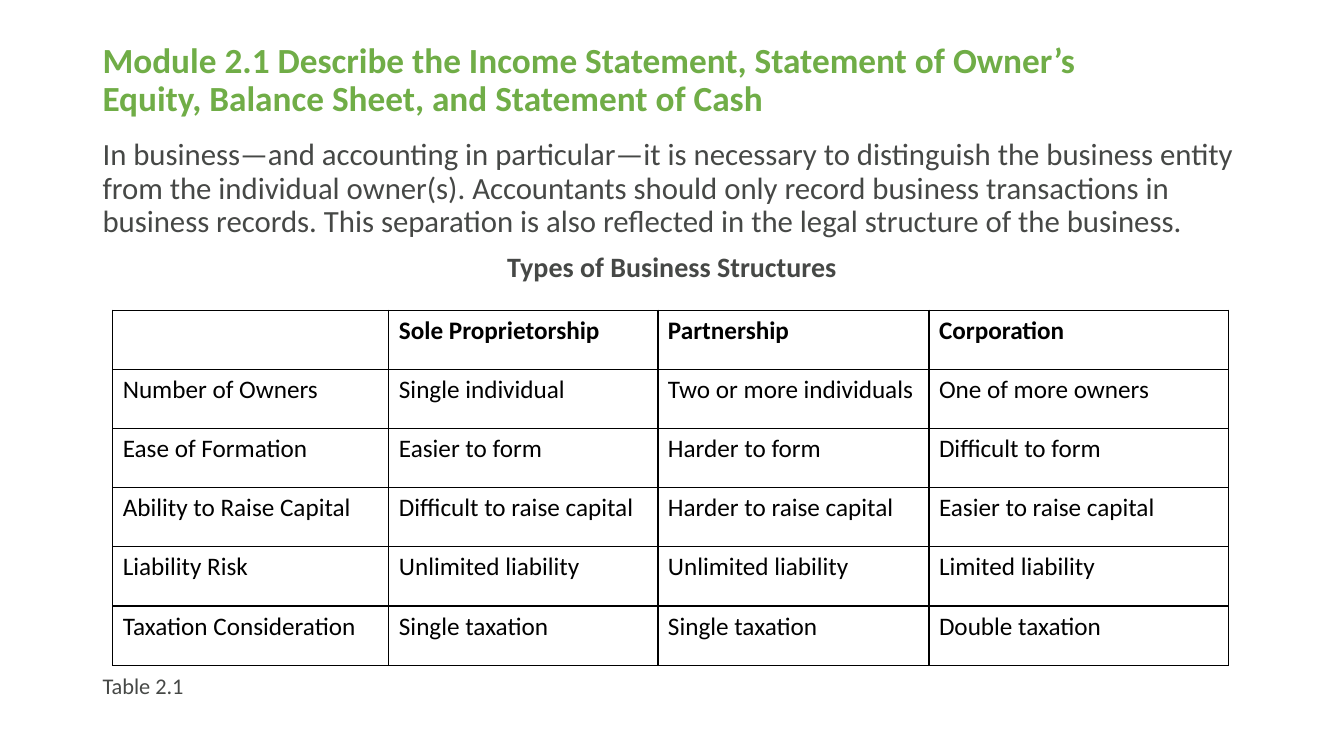
from copy import deepcopy
from dataclasses import dataclass

from lxml import etree
from pptx import Presentation
from pptx.dml.color import RGBColor
from pptx.enum.text import MSO_ANCHOR, MSO_AUTO_SIZE, PP_ALIGN
from pptx.oxml.ns import qn
from pptx.util import Cm, Pt

LEFT, CENTER = PP_ALIGN.LEFT, PP_ALIGN.CENTER
TOP, MIDDLE = MSO_ANCHOR.TOP, MSO_ANCHOR.MIDDLE
FIXED = MSO_AUTO_SIZE.NONE

FONT = "Calibri"
COLORS = {"title": "70AD47", "body": "464846", "table": "000000"}


@dataclass
class Box:
    left: float
    top: float
    width: float
    height: float


@dataclass
class Line:
    text: str
    size: float
    bold: bool = False
    align: PP_ALIGN = LEFT
    before: float = 0


TITLE_BOX = Box(2.33, 1.02, 29.21, 2.06)
BODY_BOX = Box(2.33, 3.38, 29.21, 14.94)
TITLE = ("Module 2.1 Describe the Income Statement, Statement of Owner’s\v"
         "Equity, Balance Sheet, and Statement of Cash")
BODY = [
    Line("In business—and accounting in particular—it is necessary to "
         "distinguish the business entity from the individual owner(s). "
         "Accountants should only record business transactions in business "
         "records. This separation is also reflected in the legal structure "
         "of the business.", 22),
    Line("Types of Business Structures", 20, True, CENTER, 10),
    Line("Table 2.1", 16, before=280),
]
TABLE_LEFT, TABLE_TOP, ROW_HEIGHT = 2.84, 7.82, 1.49
WIDTHS = [6.96, 6.78, 6.83, 7.54]
ROWS = [
    ["", "Sole Proprietorship", "Partnership", "Corporation"],
    ["Number of Owners", "Single individual", "Two or more individuals",
     "One of more owners"],
    ["Ease of Formation", "Easier to form", "Harder to form",
     "Difficult to form"],
    ["Ability to Raise Capital", "Difficult to raise capital",
     "Harder to raise capital", "Easier to raise capital"],
    ["Liability Risk", "Unlimited liability", "Unlimited liability",
     "Limited liability"],
    ["Taxation Consideration", "Single taxation", "Single taxation",
     "Double taxation"],
]


def write(para, text: str, *, size: float, color: str, bold: bool = False,
          align: PP_ALIGN = LEFT, spacing: float = 1.0,
          before: float = 0) -> None:
    """Fill a paragraph; line breaks take the format of the runs."""
    para.text = text
    para.alignment = align
    para.line_spacing = spacing
    para.space_before = Pt(before)
    for run in para.runs:
        font = run.font
        font.name, font.size, font.bold = FONT, Pt(size), bold
        font.color.rgb = RGBColor.from_string(COLORS[color])
    for stop in para._p.findall(qn("a:br")):
        stop.append(deepcopy(para.runs[0].font._element))


def place(shape, box: Box, anchor: MSO_ANCHOR) -> None:
    shape.left, shape.top = Cm(box.left), Cm(box.top)
    shape.width, shape.height = Cm(box.width), Cm(box.height)
    frame = shape.text_frame
    frame.word_wrap = True
    frame.auto_size = FIXED
    frame.vertical_anchor = anchor


def unlist(para) -> None:
    """Take away the bullet and its indent."""
    props = para._p.get_or_add_pPr()
    props.set("marL", "0")
    props.set("indent", "0")
    etree.SubElement(props, qn("a:buNone"))


def border(cell) -> None:
    props = cell._tc.get_or_add_tcPr()
    for index, side in enumerate(("a:lnL", "a:lnR", "a:lnT", "a:lnB")):
        edge = etree.Element(qn(side), w=str(Pt(1)))
        fill = etree.SubElement(edge, qn("a:solidFill"))
        etree.SubElement(fill, qn("a:srgbClr"), val=COLORS["table"])
        props.insert(index, edge)


def add_grid(slide) -> None:
    table = slide.shapes.add_table(
        len(ROWS), len(WIDTHS), Cm(TABLE_LEFT), Cm(TABLE_TOP),
        Cm(sum(WIDTHS)), Cm(ROW_HEIGHT * len(ROWS))).table
    table.first_row = table.horz_banding = False
    for column, width in zip(table.columns, WIDTHS):
        column.width = Cm(width)
    for r, row in enumerate(ROWS):
        table.rows[r].height = Cm(ROW_HEIGHT)
        for c, text in enumerate(row):
            cell = table.cell(r, c)
            cell.fill.background()
            border(cell)
            write(cell.text_frame.paragraphs[0], text, size=18,
                  color="table", bold=r == 0)


def main() -> None:
    deck = Presentation()
    deck.slide_width, deck.slide_height = Cm(33.87), Cm(19.05)
    slide = deck.slides.add_slide(deck.slide_layouts[1])

    title, body = slide.shapes.title, slide.placeholders[1]
    place(title, TITLE_BOX, MIDDLE)
    write(title.text_frame.paragraphs[0], TITLE, size=25.2, color="title",
          bold=True, spacing=0.9)

    place(body, BODY_BOX, TOP)
    frame = body.text_frame
    for index, line in enumerate(BODY):
        para = frame.add_paragraph() if index else frame.paragraphs[0]
        unlist(para)
        write(para, line.text, size=line.size, color="body", bold=line.bold,
              align=line.align, spacing=0.9, before=line.before)

    add_grid(slide)
    deck.save("out.pptx")


if __name__ == "__main__":
    main()
